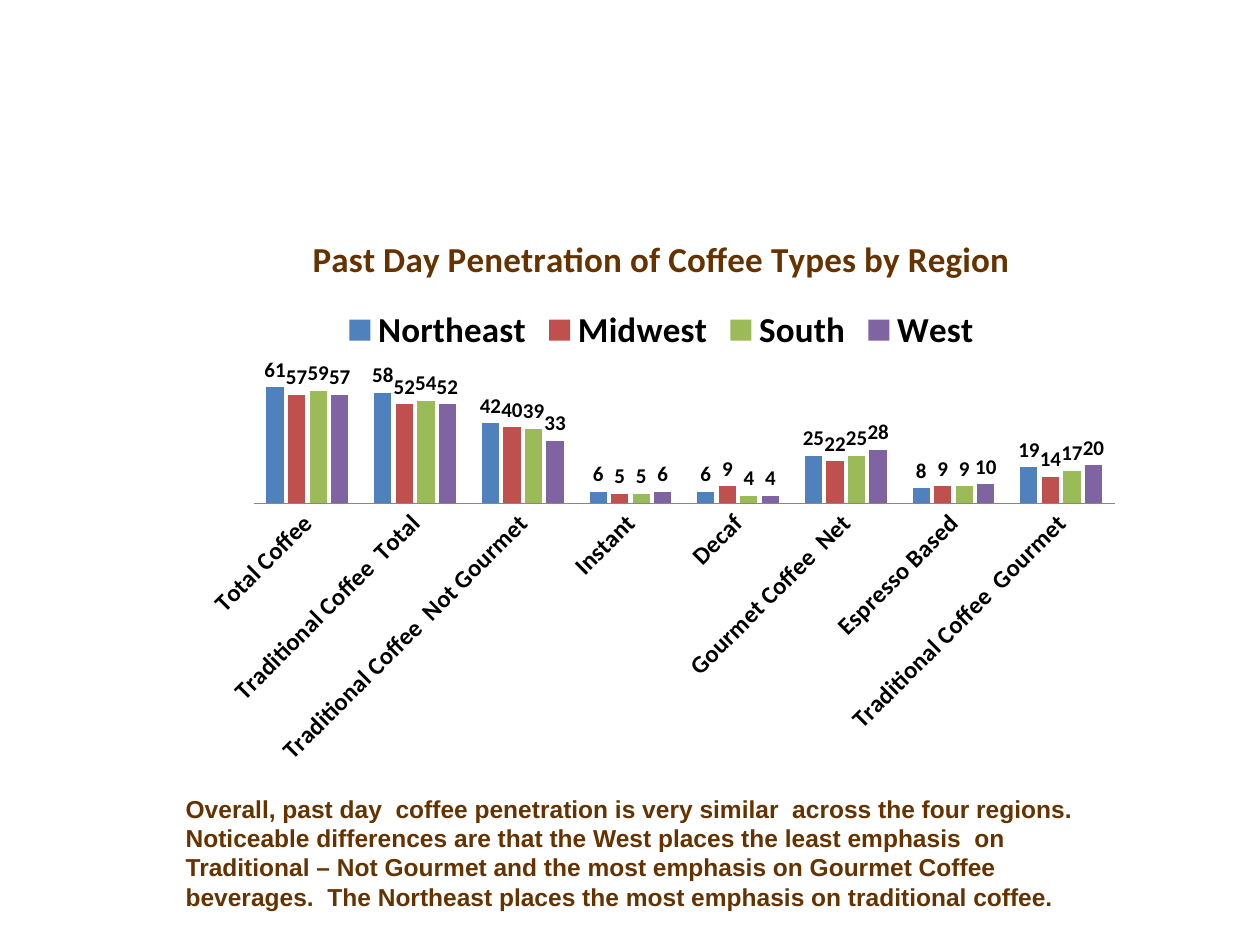
from pptx import Presentation
from pptx.chart.data import CategoryChartData
from pptx.dml.color import RGBColor
from pptx.enum.chart import (XL_CHART_TYPE, XL_LABEL_POSITION,
                             XL_LEGEND_POSITION, XL_TICK_MARK)
from pptx.enum.text import MSO_AUTO_SIZE
from pptx.util import Pt

COLUMNS = XL_CHART_TYPE.COLUMN_CLUSTERED
OUTSIDE_END = XL_LABEL_POSITION.OUTSIDE_END
LEGEND_TOP = XL_LEGEND_POSITION.TOP
NO_TICKS = XL_TICK_MARK.NONE
FIT_SHAPE = MSO_AUTO_SIZE.SHAPE_TO_FIT_TEXT

BROWN = RGBColor(0x66, 0x33, 0x00)
BLACK = RGBColor(0x00, 0x00, 0x00)
GRAY = RGBColor(0x86, 0x86, 0x86)
BLUE = RGBColor(0x4F, 0x81, 0xBD)
RED = RGBColor(0xC0, 0x50, 0x4D)
GREEN = RGBColor(0x9B, 0xBB, 0x59)
PURPLE = RGBColor(0x80, 0x64, 0xA2)

# Content
TITLE = "Past Day Penetration of Coffee Types by Region"
COFFEE_TYPES = [
    "Total Coffee", "Traditional Coffee  Total", "Traditional Coffee  Not Gourmet",
    "Instant", "Decaf", "Gourmet Coffee  Net", "Espresso Based",
    "Traditional Coffee  Gourmet",
]
REGIONS = [
    ("Northeast", BLUE, (61, 58, 42, 6, 6, 25, 8, 19)),
    ("Midwest", RED, (57, 52, 40, 5, 9, 22, 9, 14)),
    ("South", GREEN, (59, 54, 39, 5, 4, 25, 9, 17)),
    ("West", PURPLE, (57, 52, 33, 6, 4, 28, 10, 20)),
]
SUMMARY = (
    "Overall, past day  coffee penetration is very similar  across the four regions.  "
    "Noticeable differences are that the West places the least emphasis  on "
    "Traditional – Not Gourmet and the most emphasis on Gourmet Coffee beverages.  "
    "The Northeast places the most emphasis on traditional coffee."
)

# Positions: left, top, width, height
CHART_BOX = (108, 120, 540, 324)
SUMMARY_BOX = (99, 450, 534, 75)


def style_font(font, size, color=BLACK, name="Calibri", bold=True):
    font.size = Pt(size)
    font.bold = bold
    font.name = name
    font.color.rgb = color


def write_text(text_frame, text, **style):
    paragraph = text_frame.paragraphs[0]
    run = paragraph.add_run()
    run.text = text
    style_font(run.font, **style)


def add_region_chart(slide):
    data = CategoryChartData()
    data.categories = COFFEE_TYPES
    for name, _, values in REGIONS:
        data.add_series(name, values)
    chart = slide.shapes.add_chart(COLUMNS, *map(Pt, CHART_BOX), data).chart
    style_font(chart.font, size=10, bold=False)

    # Title and legend
    write_text(chart.chart_title.text_frame, TITLE, size=20, color=BROWN)
    chart.chart_title.include_in_layout = False
    chart.has_legend = True
    chart.legend.position = LEGEND_TOP
    chart.legend.include_in_layout = False
    style_font(chart.legend.font, size=20)

    # Axes, with slanted category names
    category_axis = chart.category_axis
    category_axis.major_tick_mark = NO_TICKS
    category_axis.format.line.color.rgb = GRAY
    style_font(category_axis.tick_labels.font, size=14)
    for body in chart._chartSpace.xpath(".//c:catAx/c:txPr/a:bodyPr"):
        body.set("rot", str(-45 * 60000))
    chart.value_axis.visible = False
    chart.value_axis.has_major_gridlines = False

    # Columns and value labels
    plot = chart.plots[0]
    plot.gap_width = 150
    plot.overlap = -25
    plot.vary_by_categories = False
    for series, (_, color, _) in zip(plot.series, REGIONS):
        series.format.fill.solid()
        series.format.fill.fore_color.rgb = color
        labels = series.data_labels
        labels.show_value = True
        labels.position = OUTSIDE_END
        style_font(labels.font, size=12)


def add_summary(slide):
    text_frame = slide.shapes.add_textbox(*map(Pt, SUMMARY_BOX)).text_frame
    text_frame.word_wrap = True
    text_frame.auto_size = FIT_SHAPE
    write_text(text_frame, SUMMARY, size=14, color=BROWN, name="Arial")


def main():
    presentation = Presentation()
    presentation.slide_width = Pt(720)
    presentation.slide_height = Pt(540)
    slide = presentation.slides.add_slide(presentation.slide_layouts[6])
    add_region_chart(slide)
    add_summary(slide)
    presentation.save("out.pptx")


if __name__ == "__main__":
    main()
